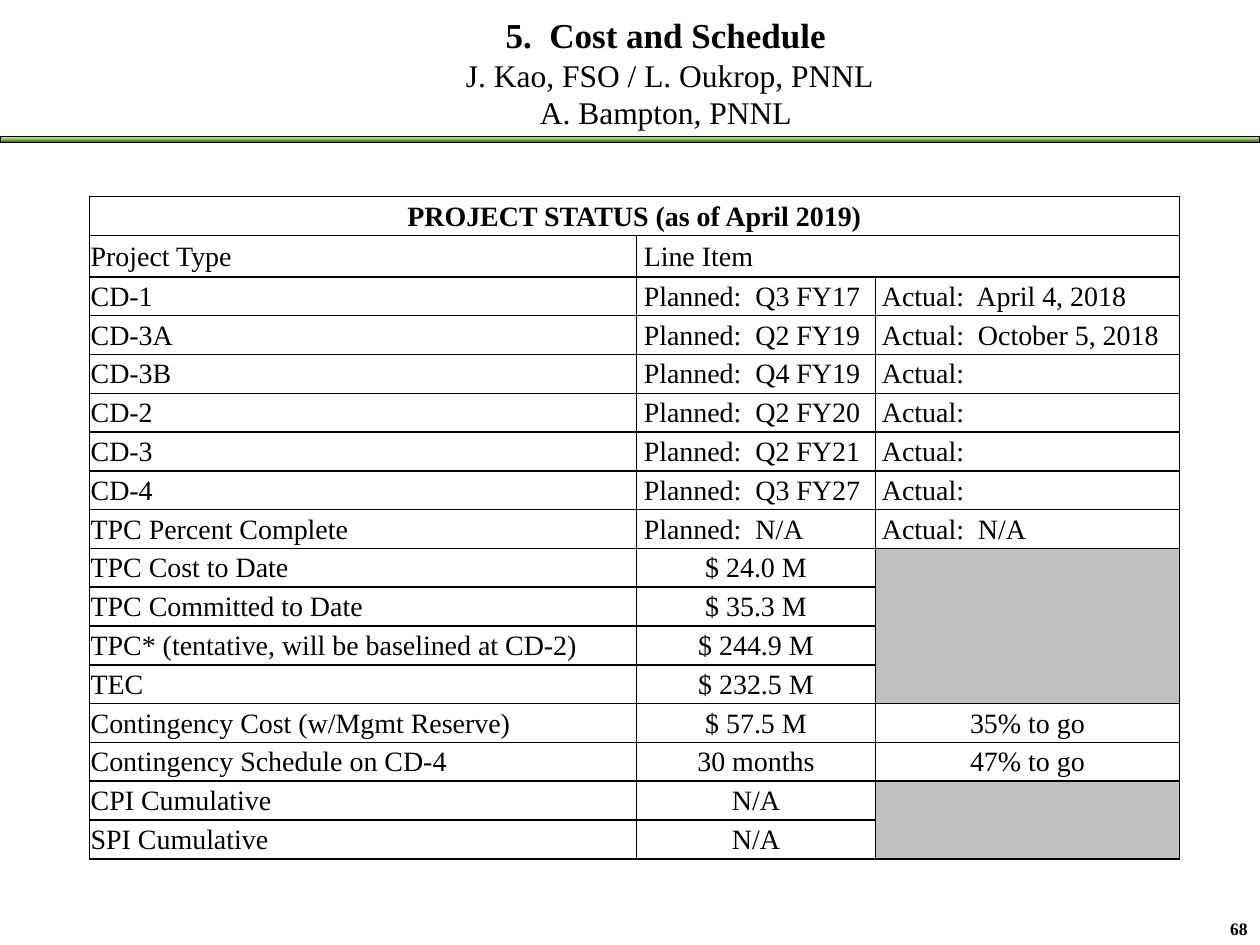
from copy import deepcopy

from pptx import Presentation, util as u
from pptx.dml.color import RGBColor
from pptx.enum import shapes, text
from pptx.oxml import parse_xml
from pptx.oxml.ns import nsdecls

WIDE, HIGH = 10, 7.5
LEFT, MID, RIGHT = text.PP_ALIGN.LEFT, text.PP_ALIGN.CENTER, text.PP_ALIGN.RIGHT

PLANS = [
    ("CD-1", "Q3 FY17", "April 4, 2018"),
    ("CD-3A", "Q2 FY19", "October 5, 2018"),
    ("CD-3B", "Q4 FY19", ""),
    ("CD-2", "Q2 FY20", ""),
    ("CD-3", "Q2 FY21", ""),
    ("CD-4", "Q3 FY27", ""),
    ("TPC Percent Complete", "N/A", "N/A"),
]
COSTS = [
    ("TPC Cost to Date", "$ 24.0 M", ""),
    ("TPC Committed to Date", "$ 35.3 M", ""),
    ("TPC* (tentative, will be baselined at CD-2)", "$ 244.9 M", ""),
    ("TEC", "$ 232.5 M", ""),
    ("Contingency Cost (w/Mgmt Reserve)", "$ 57.5 M", "35% to go"),
    ("Contingency Schedule on CD-4", "30 months", "47% to go"),
    ("CPI Cumulative", "N/A", ""),
    ("SPI Cumulative", "N/A", ""),
]


def tint(code):
    return RGBColor.from_string(code)


class Deck:
    """Holds the style and the current slide; places are shares of the slide."""

    face = "Times New Roman"
    ink = "000000"
    grey = "C0C0C0"

    def __init__(self):
        self.prs = Presentation()
        self.prs.slide_width = u.Inches(WIDE)
        self.prs.slide_height = u.Inches(HIGH)
        self.slide = self.prs.slides.add_slide(self.prs.slide_layouts[5])

    def area(self, x, y, w, h):
        wide, high = self.prs.slide_width, self.prs.slide_height
        return int(x * wide), int(y * high), int(w * wide), int(h * high)

    def style(self, run, size, bold=False):
        font = run.font
        font.size, font.bold, font.name = u.Pt(size), bold, self.face
        font.color.rgb = tint(self.ink)

    def title(self, area, lines, sizes):
        """The first line is bold."""
        box = self.slide.shapes.title
        box.left, box.top, box.width, box.height = self.area(*area)
        frame = box.text_frame
        frame.text = "\n".join(lines)
        frame.auto_size = text.MSO_AUTO_SIZE.NONE
        frame.vertical_anchor = text.MSO_ANCHOR.MIDDLE
        for i, (par, size) in enumerate(zip(frame.paragraphs, sizes)):
            par.alignment = MID
            par.space_before = u.Pt(0)
            self.style(par.runs[0], size, i == 0)

    def label(self, area, words, size, align):
        frame = self.slide.shapes.add_textbox(*self.area(*area)).text_frame
        frame.word_wrap = True
        frame.text = words
        par = frame.paragraphs[0]
        par.alignment = align
        self.style(par.runs[0], size, True)

    def band(self, area, stops):
        bar = self.slide.shapes.add_shape(
            shapes.MSO_SHAPE.RECTANGLE, *self.area(*area))
        bar.shadow.inherit = False
        bar.line.color.rgb, bar.line.width = tint(self.ink), u.Pt(0.5)
        bar.fill.gradient()
        bar.fill.gradient_angle = 270
        marks = bar._element.spPr.xpath(".//a:gsLst")[0]
        marks.append(deepcopy(marks[0]))
        for mark, (place, code) in zip(bar.fill.gradient_stops, stops):
            mark.position, mark.color.rgb = place, tint(code)

    def table(self, area, cols, rows):
        frame = self.slide.shapes.add_table(
            len(rows), len(cols), *self.area(*area))
        grid = frame.table
        grid.first_row = grid.horz_banding = False
        for col, wide in zip(grid.columns, cols):
            col.width = u.Inches(wide)
        for row, high in zip(grid.rows, rows):
            row.height = u.Inches(high)
        for cell in grid.iter_cells():
            cell.fill.background()
            self.edge(cell)
        return grid

    def edge(self, cell):
        props = cell._tc.get_or_add_tcPr()
        for i, side in enumerate("LRTB"):
            props.insert(i, parse_xml(
                f'<a:ln{side} {nsdecls("a")} w="12700"><a:solidFill>'
                f'<a:srgbClr val="{self.ink}"/></a:solidFill></a:ln{side}>'))

    def cell(self, cell, words, align=LEFT, pad=0.01, bold=False):
        cell.margin_left = u.Inches(pad)
        cell.margin_right = cell.margin_top = u.Inches(0.01)
        cell.margin_bottom = 0
        cell.vertical_anchor = text.MSO_ANCHOR.MIDDLE
        par = cell.text_frame.paragraphs[0]
        par.text, par.alignment = words, align
        for run in par.runs:
            self.style(run, 16, bold)

    def block(self, grid, first, last):
        """Merge grey cells of the last column."""
        top = grid.cell(first, 2)
        top.merge(grid.cell(last, 2))
        top.fill.solid()
        top.fill.fore_color.rgb = tint(self.grey)


def status(deck):
    count = 2 + len(PLANS) + len(COSTS)
    tall = 0.33
    rows = [(5.26 - tall) / (count - 1)] * count
    rows[1] = tall
    grid = deck.table((0.071, 1.56 / HIGH, 0.865, 5.26 / HIGH),
                      [4.34, 1.9, 2.41], rows)
    grid.cell(0, 0).merge(grid.cell(0, 2))
    grid.cell(1, 1).merge(grid.cell(1, 2))
    deck.cell(grid.cell(0, 0), "PROJECT STATUS (as of April 2019)", MID, bold=True)
    deck.cell(grid.cell(1, 0), "Project Type")
    deck.cell(grid.cell(1, 1), "Line Item", pad=0.06)

    for r, (name, plan, real) in enumerate(PLANS, 2):
        deck.cell(grid.cell(r, 0), name)
        deck.cell(grid.cell(r, 1), f"Planned:  {plan}", pad=0.06)
        deck.cell(grid.cell(r, 2), f"Actual:  {real}".strip(), pad=0.05)

    start = 2 + len(PLANS)
    for r, (name, *values) in enumerate(COSTS, start):
        deck.cell(grid.cell(r, 0), name)
        for c, value in enumerate(values, 1):
            deck.cell(grid.cell(r, c), value, MID)
    deck.block(grid, start, start + 3)
    deck.block(grid, count - 2, count - 1)


def main():
    deck = Deck()
    deck.band((0, 1.08 / HIGH, 1, 0.05 / HIGH),
              [(0, "DDEBCF"), (0.5, "9CB86E"), (1, "156B13")])
    deck.label((0.959, 7.24 / HIGH, 0.041, 0.26 / HIGH), "68", 10, RIGHT)
    status(deck)
    deck.title((0.276, 0.12 / HIGH, 0.505, 0.91 / HIGH),
               ["5.  Cost and Schedule", " J. Kao, FSO / L. Oukrop, PNNL",
                "A. Bampton, PNNL"], [20, 18, 18])
    deck.prs.save("out.pptx")


if __name__ == "__main__":
    main()
